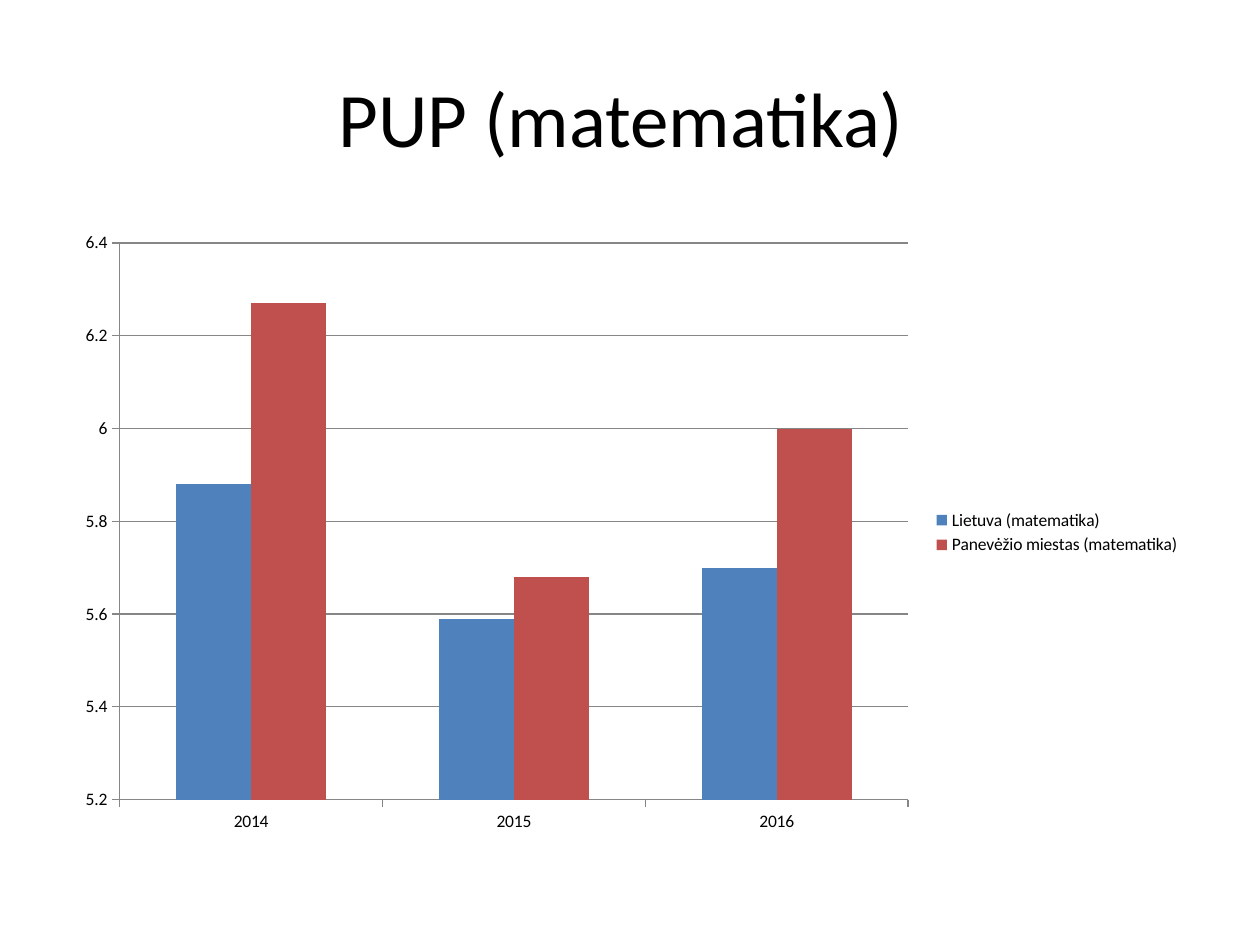
from pptx import Presentation
from pptx.chart import data
from pptx.dml.color import RGBColor
from pptx.enum import chart as ch, text
from pptx.util import Cm, Pt


def paint(hue):
    return RGBColor.from_string(hue)


def style(font, size):
    font.name = "Calibri"
    font.size = Pt(size)
    font.color.rgb = paint("000000")


deck = Presentation()
deck.slide_width, deck.slide_height = Cm(25.4), Cm(19.05)
slide = deck.slides.add_slide(deck.slide_layouts[5])
left, width = Cm(1.27), Cm(22.86)

# Title
title = slide.shapes.title
title.left, title.top, title.width, title.height = left, Cm(0.76), width, Cm(3.18)
frame = title.text_frame
frame.vertical_anchor = text.MSO_ANCHOR.MIDDLE
para = frame.paragraphs[0]
para.alignment = text.PP_ALIGN.CENTER
run = para.add_run()
run.text = "PUP (matematika) "
style(run.font, 44)

# Exam results by year
scores = data.CategoryChartData()
scores.categories = ["2014", "2015", "2016"]
scores.add_series("Lietuva (matematika)", (5.88, 5.59, 5.7))
scores.add_series("Panevėžio miestas (matematika) ", (6.27, 5.68, 6))
chart = slide.shapes.add_chart(
    ch.XL_CHART_TYPE.COLUMN_CLUSTERED, left, Cm(4.45), width, Cm(12.57), scores
).chart
style(chart.font, 10)
chart.has_title = False
chart.has_legend = True
chart.legend.position = ch.XL_LEGEND_POSITION.RIGHT
chart.legend.include_in_layout = False

plot = chart.plots[0]
plot.gap_width = 150
plot.overlap = 0
plot.vary_by_categories = False
for series, hue in zip(plot.series, ("4F81BD", "C0504D")):
    series.format.fill.solid()
    series.format.fill.fore_color.rgb = paint(hue)

years, marks = chart.category_axis, chart.value_axis
marks.minimum_scale, marks.maximum_scale, marks.major_unit = 5.2, 6.4, 0.2
marks.has_major_gridlines = True
for axis in (years, marks):
    axis.major_tick_mark = ch.XL_TICK_MARK.OUTSIDE
for part in (years, marks, marks.major_gridlines):
    part.format.line.color.rgb = paint("868686")
    part.format.line.width = Pt(0.75)

deck.save("out.pptx")
